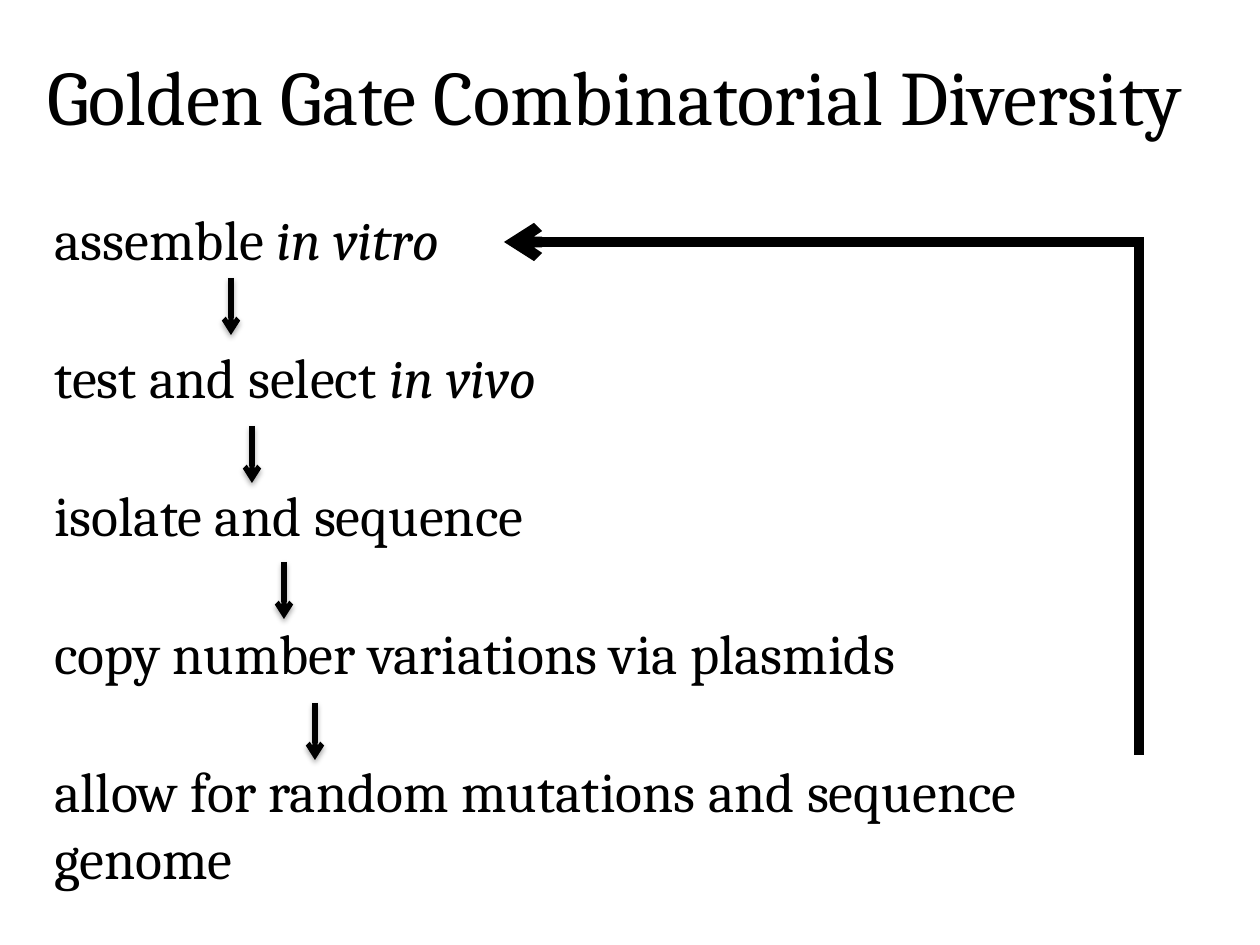
from dataclasses import dataclass

from lxml.etree import SubElement
from pptx import Presentation
from pptx.dml.color import RGBColor
from pptx.enum.shapes import MSO_CONNECTOR as Connector
from pptx.oxml.ns import qn
from pptx.slide import Slide
from pptx.util import Emu, Pt

PX = 914400 // 126
BLACK = RGBColor(0x00, 0x00, 0x00)
FONT = "Cambria"
STEP_LEFT, STEP_TOP, STEP_PITCH, STEP_HEIGHT = 42, 198, 138, 81
ARROW_LENGTH = 57


@dataclass(frozen=True)
class Label:
    left: int
    top: int
    width: int
    height: int
    size: int
    plain: str
    italic: str = ""


@dataclass(frozen=True)
class Step:
    width: int
    plain: str
    italic: str = ""


@dataclass(frozen=True)
class Line:
    x1: int
    y1: int
    x2: int
    y2: int
    weight: float
    arrow: bool = False
    shadow: bool = False


TITLE = Label(35, 42, 1198, 106, 44, "Golden Gate Combinatorial Diversity")

STEPS = [
    Step(421, "assemble ", "in vitro"),
    Step(520, "test and select ", "in vivo"),
    Step(501, "isolate and sequence"),
    Step(872, "copy number variations via plasmids"),
    Step(1160, "allow for random mutations and sequence genome"),
]

FEEDBACK_LOOP = [
    Line(1139, 755, 1139, 239, 6.25),
    Line(1144, 242, 504, 242, 6.25, arrow=True),
]

STEP_ARROW_STARTS = [(231, 278), (252, 426), (284, 562), (315, 703)]


def px(length: int) -> Emu:
    return Emu(length * PX)


def draw_label(slide: Slide, label: Label) -> None:
    box = slide.shapes.add_textbox(
        px(label.left), px(label.top), px(label.width), px(label.height)
    )
    box.text_frame.word_wrap = True
    paragraph = box.text_frame.paragraphs[0]
    paragraph.text = label.plain
    if label.italic:
        latin_phrase = paragraph.add_run()
        latin_phrase.text = label.italic
        latin_phrase.font.italic = True
    for run in paragraph.runs:
        run.font.name = FONT
        run.font.size = Pt(label.size)
        run.font.color.rgb = BLACK


def draw_line(slide: Slide, line: Line) -> None:
    connector = slide.shapes.add_connector(
        Connector.STRAIGHT, px(line.x1), px(line.y1), px(line.x2), px(line.y2)
    )
    connector.line.color.rgb = BLACK
    connector.line.width = Pt(line.weight)
    properties = connector._element.spPr
    if line.arrow:
        SubElement(properties.find(qn("a:ln")), qn("a:tailEnd"), type="arrow")
    effects = SubElement(properties, qn("a:effectLst"))
    if line.shadow:
        shadow = SubElement(
            effects, qn("a:outerShdw"), blurRad="40000", dist="23000",
            dir="5400000", rotWithShape="0",
        )
        color = SubElement(shadow, qn("a:srgbClr"), val=str(BLACK))
        SubElement(color, qn("a:alpha"), val="35000")


def main() -> None:
    deck = Presentation()
    deck.slide_width, deck.slide_height = px(1260), px(945)
    slide = deck.slides.add_slide(deck.slide_layouts[6])

    draw_label(slide, TITLE)
    for row, step in enumerate(STEPS):
        top = STEP_TOP + row * STEP_PITCH
        draw_label(slide, Label(STEP_LEFT, top, step.width, STEP_HEIGHT, 32,
                                step.plain, step.italic))

    for line in FEEDBACK_LOOP:
        draw_line(slide, line)
    for x, y in STEP_ARROW_STARTS:
        draw_line(slide, Line(x, y, x, y + ARROW_LENGTH, 3, arrow=True, shadow=True))

    deck.save("out.pptx")


if __name__ == "__main__":
    main()
